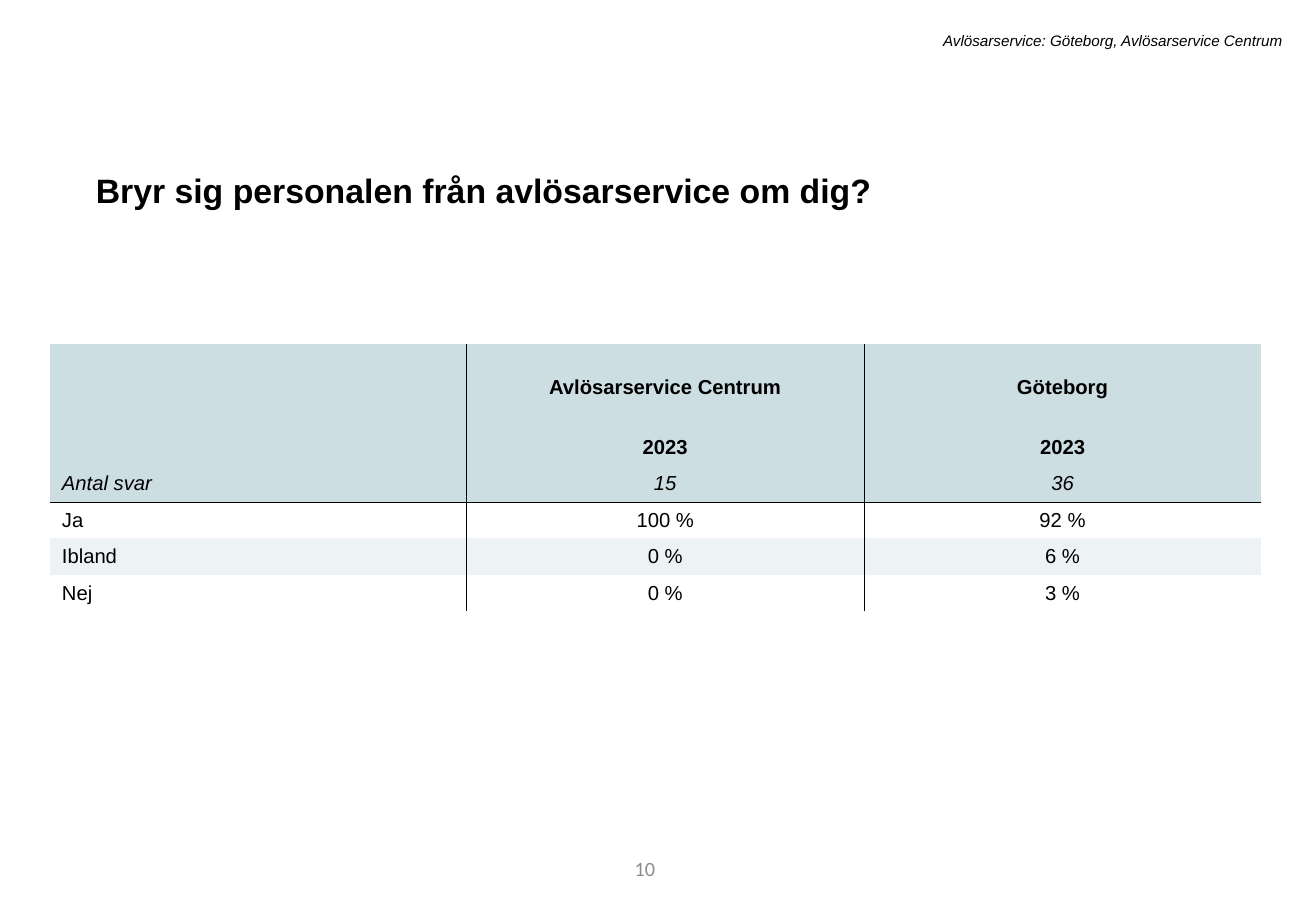
from pptx import Presentation
from pptx.dml.color import RGBColor
from pptx.enum.text import MSO_ANCHOR as Anchor, PP_ALIGN as Align
from pptx.oxml import parse_xml
from pptx.oxml.ns import nsdecls
from pptx.util import Pt

PX = 9144
COLORS = {"ink": "000000", "page": "8C8C8C", "header": "CCDEE1", "band": "EDF3F4"}
SLIDE_SIZE = (1083, 750)
PAGE_BOX = (305, 695, 244, 40)
TITLE_BOX = (69, 128, 940, 47)
UNIT_BOX = (179, 21, 886, 25)
TABLE_BOX = (41, 283, 997, 209)
COLUMN_WIDTHS = (343, 327, 327)
ROW_HEIGHTS = (50, 50, 25, 28, 28, 28)
HEADER_ROWS = 3
RULE_WIDTH = Pt(0.25)

ANSWERS = (
    ("", "Avlösarservice Centrum", "Göteborg"),
    ("", "2023", "2023"),
    ("Antal svar", "15", "36"),
    ("Ja", "100 %", "92 %"),
    ("Ibland", "0 %", "6 %"),
    ("Nej", "0 %", "3 %"),
)
PAGE_FONT = {"name": "Calibri", "size": Pt(12)}
TITLE_FONT = {"name": "Arial", "size": Pt(20), "bold": True}
UNIT_FONT = {"name": "Arial", "size": Pt(9), "italic": True}
CELL_FONT = {"name": "Arial", "size": Pt(12), "bold": False, "italic": False}
TITLE_SPACING = {"line_spacing": 1.2, "space_before": Pt(10)}


def scaled(box):
    return [length * PX for length in box]


def apply(target, values):
    for attribute, value in values.items():
        setattr(target, attribute, value)


def write(frame, text, font, color="ink", **paragraph_format):
    paragraph = frame.paragraphs[0]
    apply(paragraph, paragraph_format)
    run = paragraph.add_run()
    run.text = text
    apply(run.font, font)
    run.font.color.rgb = RGBColor.from_string(COLORS[color])


def add_label(slide, box, text, font, color="ink", anchor=Anchor.TOP, **paragraph_format):
    frame = slide.shapes.add_textbox(*scaled(box)).text_frame
    apply(frame, {"word_wrap": True, "vertical_anchor": anchor})
    write(frame, text, font, color, **paragraph_format)


def rule_edges(cell, ruled):
    properties = cell._tc.get_or_add_tcPr()
    for edge in "LRTB":
        paint = "<a:noFill/>"
        if edge in ruled:
            paint = f'<a:solidFill><a:srgbClr val="{COLORS["ink"]}"/></a:solidFill>'
        properties.append(parse_xml(
            f'<a:ln{edge} {nsdecls("a")} w="{RULE_WIDTH}">{paint}</a:ln{edge}>'))


def fill_cell(cell, row, column):
    ruled = {
        "L": column > 0,
        "R": column < len(COLUMN_WIDTHS) - 1,
        "T": row == HEADER_ROWS,
        "B": row == HEADER_ROWS - 1,
    }
    rule_edges(cell, [edge for edge, shown in ruled.items() if shown])

    shade = "header" if row < HEADER_ROWS else "band" if row == HEADER_ROWS + 1 else None
    if shade:
        cell.fill.solid()
        cell.fill.fore_color.rgb = RGBColor.from_string(COLORS[shade])
    else:
        cell.fill.background()

    heading = row < HEADER_ROWS - 1
    cell.vertical_anchor = Anchor.BOTTOM if heading else Anchor.MIDDLE
    if ANSWERS[row][column]:
        font = CELL_FONT | {"bold": heading, "italic": row == HEADER_ROWS - 1}
        write(cell.text_frame, ANSWERS[row][column], font,
              alignment=Align.CENTER if column else Align.LEFT)


def add_answer_table(slide, box):
    table = slide.shapes.add_table(len(ROW_HEIGHTS), len(COLUMN_WIDTHS), *scaled(box)).table
    apply(table, {"first_row": False, "horz_banding": False})
    for column, width in zip(table.columns, scaled(COLUMN_WIDTHS)):
        column.width = width
    for row, height in zip(table.rows, scaled(ROW_HEIGHTS)):
        row.height = height
    for row in range(len(ROW_HEIGHTS)):
        for column in range(len(COLUMN_WIDTHS)):
            fill_cell(table.cell(row, column), row, column)


def main():
    deck = Presentation()
    deck.slide_width, deck.slide_height = scaled(SLIDE_SIZE)
    slide = deck.slides.add_slide(deck.slide_layouts[6])
    add_label(slide, PAGE_BOX, "10", PAGE_FONT, "page", Anchor.MIDDLE, alignment=Align.RIGHT)
    add_label(slide, TITLE_BOX, "Bryr sig personalen från avlösarservice om dig?",
              TITLE_FONT, **TITLE_SPACING)
    add_label(slide, UNIT_BOX, "Avlösarservice: Göteborg, Avlösarservice Centrum",
              UNIT_FONT, alignment=Align.RIGHT)
    add_answer_table(slide, TABLE_BOX)
    deck.save("out.pptx")


if __name__ == "__main__":
    main()
